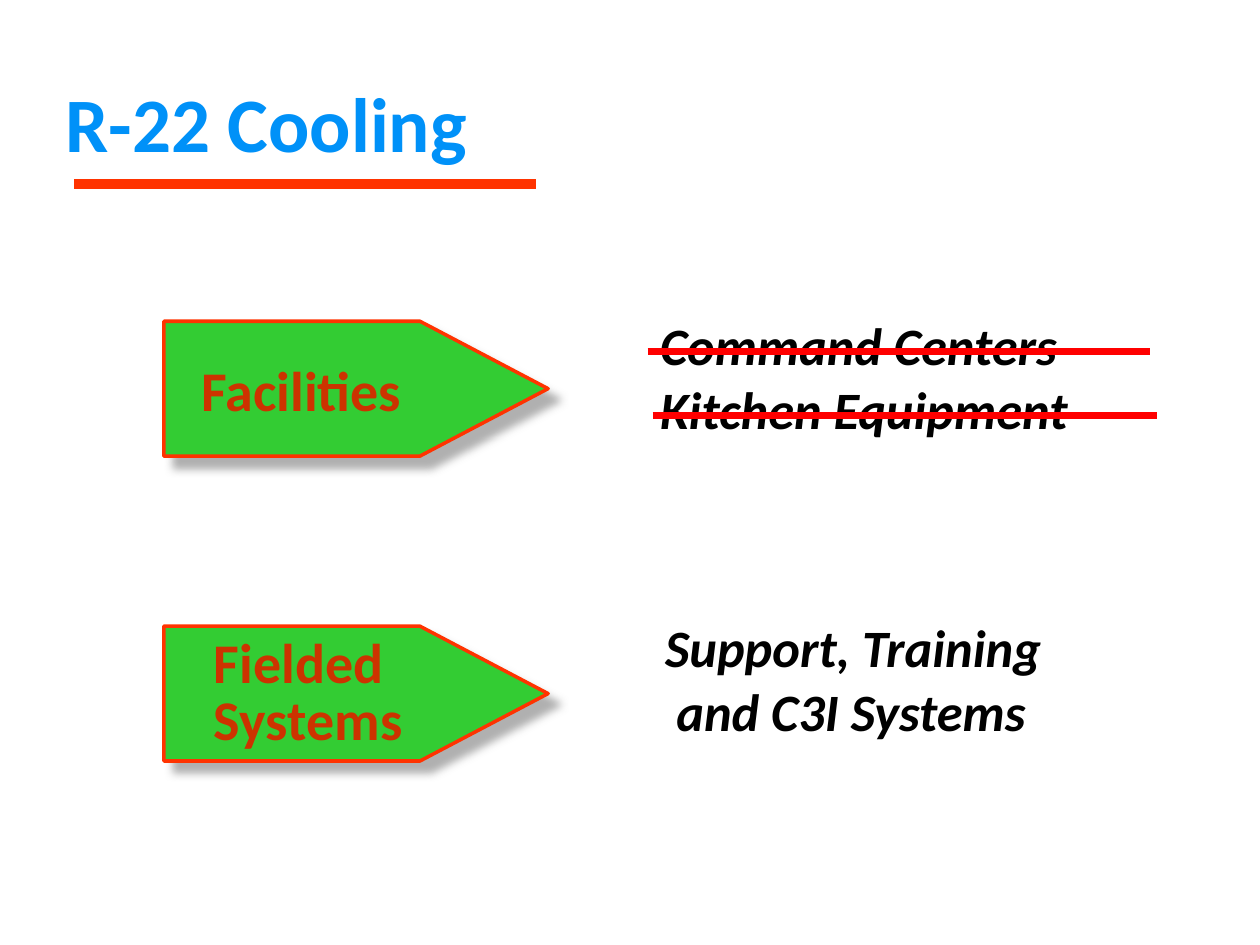
from lxml import etree
from pptx import Presentation
from pptx.dml.color import RGBColor
from pptx.enum import shapes, text
from pptx.oxml import parse_xml
from pptx.oxml.ns import nsdecls
from pptx.util import Inches, Pt

COLORS = {"title": "0091F8", "arrow": "33CC33", "outline": "FF3300",
          "label": "CC3300", "detail": "000000", "strike": "FF0000", "shadow": "969696"}


def fill_text(shape, lines, size, color, spacing=1.0, italic=False, indents=()):
    """Write one paragraph per line, with optional left indents by line number."""
    frame = shape.text_frame
    frame.word_wrap = True
    for index, line in enumerate(lines):
        paragraph = frame.paragraphs[0] if index == 0 else frame.add_paragraph()
        paragraph.alignment = text.PP_ALIGN.LEFT
        paragraph.line_spacing = spacing
        if index:
            paragraph.space_before = Pt(size / 2)
        if index in indents:
            paragraph._p.get_or_add_pPr().set("marL", str(Inches(0.09)))
        run = paragraph.add_run()
        run.text = line
        run.font.name = "Calibri"
        run.font.size = Pt(size)
        run.font.bold = True
        run.font.italic = italic
        run.font.color.rgb = RGBColor.from_string(COLORS[color])


def add_rule(left, top, right, color, width):
    line = slide.shapes.add_connector(shapes.MSO_CONNECTOR.STRAIGHT, Inches(left),
                                      Inches(top), Inches(right), Inches(top))
    line.line.color.rgb = RGBColor.from_string(COLORS[color])
    line.line.width = Pt(width)
    etree.SubElement(line._element.spPr, "{http://schemas.openxmlformats.org/drawingml/2006/main}effectLst")


presentation = Presentation()
presentation.slide_width = Inches(10)
presentation.slide_height = Inches(7.5)
slide = presentation.slides.add_slide(presentation.slide_layouts[5])

title = slide.shapes.title
title.left, title.top, title.width, title.height = map(Inches, (0.42, 0.17, 8.5, 1.21))
title.text_frame.vertical_anchor = text.MSO_ANCHOR.BOTTOM
fill_text(title, ["R-22 Cooling"], 44, "title")

# Arrow top, label, label box, label line spacing
arrows = [
    (2.55, "Facilities", (1.5, 2.77, 2.32, 0.63), 1.0),
    (4.97, "Fielded Systems", (1.6, 5.01, 2.37, 1.01), 0.85),
]
for top, label, box, spacing in arrows:
    arrow = slide.shapes.add_shape(shapes.MSO_SHAPE.PENTAGON, Inches(1.3), Inches(top),
                                   Inches(3.05), Inches(1.07))
    arrow.adjustments[0] = 0.95
    arrow.fill.solid()
    arrow.fill.fore_color.rgb = RGBColor.from_string(COLORS["arrow"])
    arrow.line.color.rgb = RGBColor.from_string(COLORS["outline"])
    arrow.line.width = Pt(2)
    arrow._element.spPr.append(parse_xml(
        f'<a:effectLst {nsdecls("a")}><a:outerShdw blurRad="{Pt(5)}" dist="{Pt(8.5)}" '
        f'dir="2700000" algn="ctr" rotWithShape="0"><a:srgbClr val="{COLORS["shadow"]}">'
        '<a:alpha val="75000"/></a:srgbClr></a:outerShdw></a:effectLst>'))
    label_box = slide.shapes.add_textbox(*map(Inches, box))
    label_box.text_frame.auto_size = text.MSO_AUTO_SIZE.SHAPE_TO_FIT_TEXT
    fill_text(label_box, [label], 32, "label", spacing)

details = [
    ((5.14, 2.61, 4.04, 0.99), ["Command Centers", "Kitchen Equipment"], ()),
    ((5.18, 5.01, 3.73, 0.99), ["Support, Training", "and C3I Systems"], (1,)),
]
for box, lines, indents in details:
    detail_box = slide.shapes.add_textbox(*map(Inches, box))
    detail_box.text_frame.auto_size = text.MSO_AUTO_SIZE.SHAPE_TO_FIT_TEXT
    fill_text(detail_box, lines, 30, "detail", 0.6, True, indents)

add_rule(0.59, 1.46, 4.25, "outline", 6)
add_rule(5.18, 3.3, 9.18, "strike", 4)
add_rule(5.14, 2.79, 9.13, "strike", 4)

presentation.save("out.pptx")
